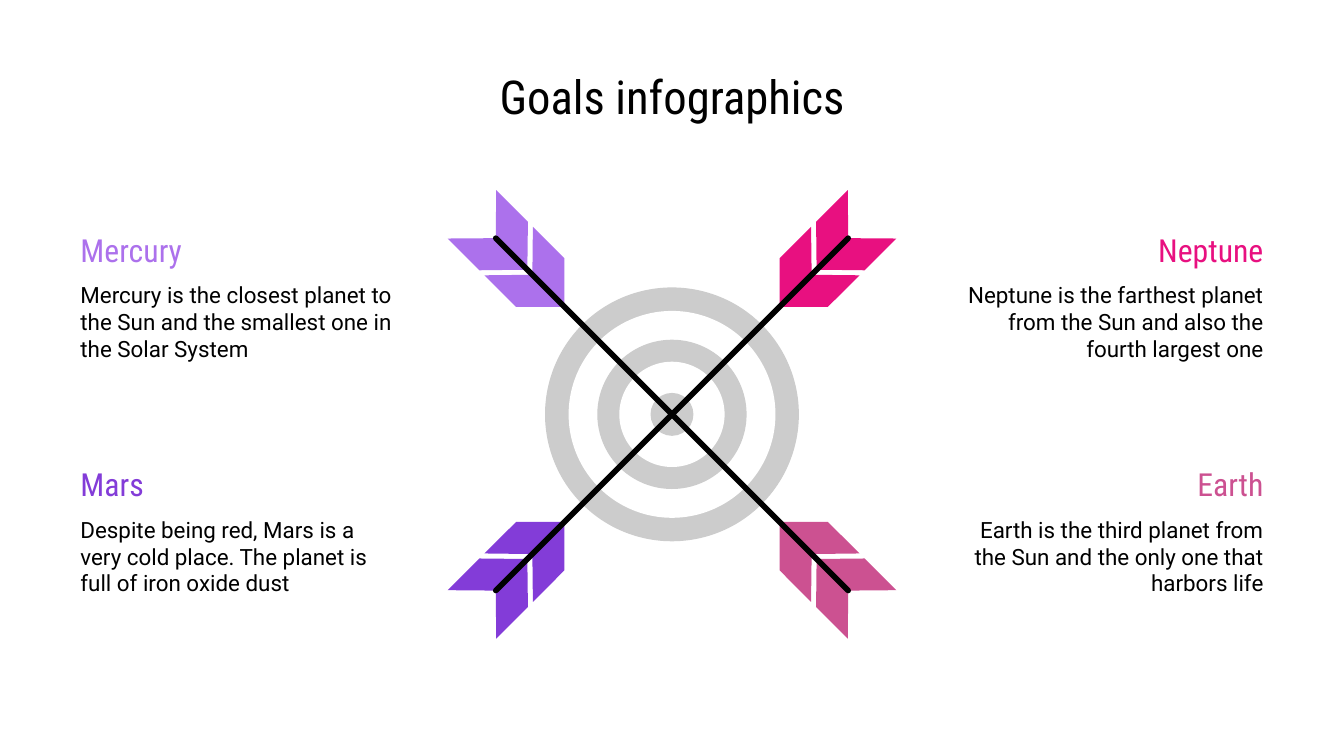
"""Build the goals infographic: a target crossed by four arrows, each with a planet."""
from lxml import etree
from pptx import Presentation
from pptx import util as u
from pptx.dml.color import RGBColor
from pptx.enum import shapes, text
from pptx.oxml.ns import qn

Pt = u.Pt
COLORS = {
    "ink": "000000", "ring": "CCCCCC", "gap": "FFFFFF",
    "Mercury": "AC71EC", "Neptune": "E81080", "Mars": "833CD8", "Earth": "CC5191",
}


def paint(part, color):
    part.fill.solid()
    part.fill.fore_color.rgb = RGBColor.from_string(COLORS[color])
    part.line.fill.background()
    part.shadow.inherit = False


def write(box, wording, place, font_name, size, color, align):
    box.left, box.top, box.width, box.height = [Pt(length) for length in place]
    frame = box.text_frame
    frame.word_wrap = True
    frame.vertical_anchor = text.MSO_ANCHOR.MIDDLE
    frame.margin_left = frame.margin_right = Pt(7.2)
    frame.margin_top = frame.margin_bottom = Pt(7.2)
    frame.text = wording
    paragraph = frame.paragraphs[0]
    paragraph.alignment = align
    paragraph.font.name = font_name
    paragraph.font.size = Pt(size)
    paragraph.font.color.rgb = RGBColor.from_string(COLORS[color])


deck = Presentation()
deck.slide_width, deck.slide_height = Pt(720), Pt(405)
slide = deck.slides.add_slide(deck.slide_layouts[5])
write(slide.shapes.title, "Goals infographics", (36, 32.1, 648, 38.2),
      "Roboto Condensed", 25, "ink", text.PP_ALIGN.CENTER)

center_x, center_y = 360, 222
for radius, color in [(68, "ring"), (55.4, "gap"), (40, "ring"), (28.2, "gap"), (11.5, "ring")]:
    ring = slide.shapes.add_shape(
        shapes.MSO_SHAPE.OVAL, Pt(center_x - radius), Pt(center_y - radius),
        Pt(2 * radius), Pt(2 * radius))
    paint(ring, color)

shaft_reach = 94.4
feathers = [
    [(57.6, 57.6), (57.6, 83.5), (74.5, 100.5), (74.8, 74.8)],
    [(77.5, 77.3), (77.2, 103.2), (94.2, 120.2), (94.4, 94.4)],
]
feathers += [[(y, x) for x, y in feather] for feather in feathers]

planets = [
    ("Mercury", "Mercury is the closest planet to the Sun and the smallest one in the Solar System", -1, -1),
    ("Neptune", "Neptune is the farthest planet from the Sun and also the fourth largest one", 1, -1),
    ("Mars", "Despite being red, Mars is a very cold place. The planet is full of iron oxide dust", -1, 1),
    ("Earth", "Earth is the third planet from the Sun and the only one that harbors life", 1, 1),
]
for planet, fact, side_x, side_y in planets:
    for feather in feathers:
        corners = [(Pt(center_x + side_x * x), Pt(center_y + side_y * y)) for x, y in feather]
        outline = slide.shapes.build_freeform(*corners[0])
        outline.add_line_segments(corners[1:], close=True)
        paint(outline.convert_to_shape(), planet)

    shaft = slide.shapes.add_connector(
        shapes.MSO_CONNECTOR.STRAIGHT, Pt(center_x), Pt(center_y),
        Pt(center_x + side_x * shaft_reach), Pt(center_y + side_y * shaft_reach))
    shaft.line.width = Pt(3)
    shaft.line.color.rgb = RGBColor.from_string(COLORS["ink"])
    shaft_properties = shaft._element.spPr
    shaft_properties.find(qn("a:ln")).set("cap", "rnd")
    etree.SubElement(shaft_properties, qn("a:effectLst"))

    left, width, align = (
        (36, 184.5, text.PP_ALIGN.LEFT) if side_x < 0 else (498.4, 185.6, text.PP_ALIGN.RIGHT))
    top = 119.6 if side_y < 0 else 245.3
    name_box = slide.shapes.add_textbox(0, 0, 0, 0)
    write(name_box, planet, (left, top, width, 28.1), "Roboto Condensed", 17, planet, align)
    fact_box = slide.shapes.add_textbox(0, 0, 0, 0)
    write(fact_box, fact, (left, top + 26, width, 53.3), "Roboto", 12, "ink", align)

deck.save("out.pptx")
